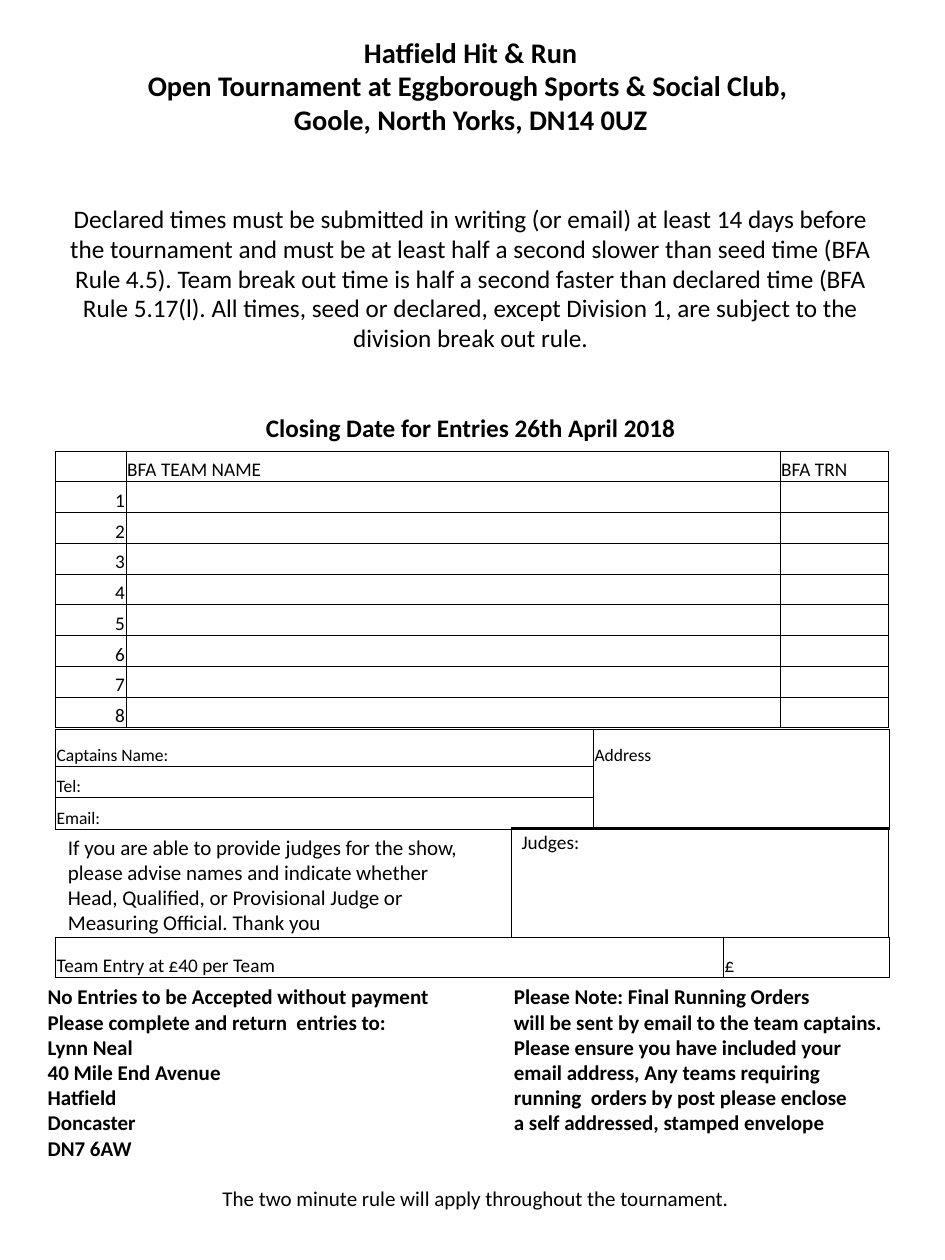
from lxml.etree import SubElement
from pptx import Presentation
from pptx.dml.color import RGBColor
from pptx.enum.text import MSO_ANCHOR as Anchor, MSO_AUTO_SIZE as AutoSize, PP_ALIGN as Align
from pptx.oxml.ns import qn
from pptx.util import Inches, Pt

COLORS = {"ink": "000000"}
FONT = "Calibri"

# Content: text, size, bold, space before in points
HEADING = [
    ("Hatfield Hit & Run\vOpen Tournament at Eggborough Sports & Social Club, \v"
     "Goole, North Yorks, DN14 0UZ", 16.2, True, 0),
    ("Declared times must be submitted in writing (or email) at least 14 days before the "
     "tournament and must be at least half a second slower than seed time (BFA Rule 4.5). "
     "Team break out time is half a second faster than declared time (BFA Rule 5.17(l). "
     "All times, seed or declared, except Division 1, are subject to the division break "
     "out rule.", 14.4, False, 39),
    ("Closing Date for Entries 26th April 2018", 14.4, True, 34.5),
]
TEAMS = [("", "BFA TEAM NAME", "BFA TRN")] + [(str(n), "", "") for n in range(1, 9)]
CONTACT = [("Captains Name:", "Address"), ("Tel:", ""), ("Email:", "")]
JUDGES = [("Judges:",), ("",), ("",), ("",)]
FEES = [("Team Entry at £40 per Team", "£")]
JUDGE_REQUEST = ("If you are able to provide judges for the show, please advise names and "
                 "indicate whether Head, Qualified, or Provisional Judge or Measuring "
                 "Official. Thank you")
RETURN_NOTES = [
    ("No Entries to be Accepted without payment", "Please Note: Final Running Orders"),
    ("Please complete and return  entries to:", "will be sent by email to the team captains."),
    ("Lynn Neal", "Please ensure you have included your"),
    ("40 Mile End Avenue", "email address, Any teams requiring"),
    ("Hatfield", "running  orders by post please enclose"),
    ("Doncaster", "a self addressed, stamped envelope"),
    ("DN7 6AW", ""),
]
CLOSING_LINE = "The two minute rule will apply throughout the tournament."

LEFT = 0.44
NOTES_TAB = 3.7


def add_text(para, text, size, bold=False):
    span = para.add_run()
    span.text = text
    span.font.name, span.font.size, span.font.bold = FONT, Pt(size), bold
    span.font.color.rgb = RGBColor.from_string(COLORS["ink"])


def add_box(page, left, top, width, height):
    frame = page.shapes.add_textbox(*map(Inches, (left, top, width, height))).text_frame
    frame.word_wrap = True
    return frame


def rule_cell(cell, sides, width):
    props = cell._tc.get_or_add_tcPr()
    for side in "LRTB":
        line = SubElement(props, qn(f"a:ln{side}"), w=str(Pt(width)))
        if side in sides:
            fill = SubElement(line, qn("a:solidFill"))
            SubElement(fill, qn("a:srgbClr"), val=COLORS["ink"])
        else:
            SubElement(line, qn("a:noFill"))


def add_form(page, rows, left, top, widths, heights, size, line,
             open_column=None, indent=0.01):
    """Ruled table; the cells of open_column have no rules between rows."""
    frame = page.shapes.add_table(len(rows), len(widths), *map(
        Inches, (left, top, sum(widths), sum(heights))))
    table = frame.table
    table.first_row = table.horz_banding = False
    for column, width in zip(table.columns, widths):
        column.width = Inches(width)
    for r, (values, height) in enumerate(zip(rows, heights)):
        table.rows[r].height = Inches(height)
        for c, text in enumerate(values):
            cell = table.cell(r, c)
            cell.margin_left, cell.margin_right = Inches(indent), Inches(0.01)
            cell.margin_top, cell.margin_bottom = Inches(0.01), 0
            cell.vertical_anchor = Anchor.BOTTOM
            sides = "LRTB"
            if c == open_column:
                sides = "LR" + "T" * (r == 0) + "B" * (r == len(rows) - 1)
            rule_cell(cell, sides, line)
            cell.fill.background()
            para = cell.text_frame.paragraphs[0]
            if text:
                para.alignment = Align.RIGHT if text.isdigit() else Align.LEFT
                add_text(para, text, size)
            else:
                SubElement(para._p, qn("a:endParaRPr"), sz=str(size * 100))


def main():
    deck = Presentation()
    deck.slide_width, deck.slide_height = Inches(7.5), Inches(10)
    page = deck.slides.add_slide(deck.slide_layouts[5])

    # Heading, rules and closing date
    title = page.shapes.title
    title.left, title.top, title.width, title.height = map(Inches, (0.36, 0.27, 6.75, 3.27))
    frame = title.text_frame
    frame.word_wrap, frame.auto_size = True, AutoSize.NONE
    frame.vertical_anchor = Anchor.MIDDLE
    for i, (text, size, bold, before) in enumerate(HEADING):
        para = frame.add_paragraph() if i else frame.paragraphs[0]
        para.alignment, para.line_spacing, para.space_before = Align.CENTER, 0.98, Pt(before)
        for j, part in enumerate(text.split("\v")):
            if j:
                para.add_line_break()
            add_text(para, part, size, bold)

    # Entry form
    add_form(page, TEAMS, LEFT, 3.58, [0.56, 5.19, 0.86], [2.2 / 9] * 9, 11, 0.5)
    add_form(page, CONTACT, LEFT, 5.79, [4.27, 2.35], [0.29, 0.25, 0.25], 10, 0.5,
             open_column=1)
    request = add_box(page, LEFT, 6.57, 3.31, 0.91)
    add_text(request.paragraphs[0], JUDGE_REQUEST, 12)
    add_form(page, JUDGES, 4.06, 6.57, [2.99], [0.87 / 4] * 4, 11, 1,
             open_column=0, indent=0.08)
    add_form(page, FEES, LEFT, 7.44, [5.3, 1.32], [0.32], 11, 1)

    # Return address beside the running order note
    notes = add_box(page, 0.28, 7.76, 6.99, 1.92)
    for i, (address, note) in enumerate(RETURN_NOTES):
        para = notes.add_paragraph() if i else notes.paragraphs[0]
        stops = SubElement(para._p.get_or_add_pPr(), qn("a:tabLst"))
        SubElement(stops, qn("a:tab"), pos=str(Inches(NOTES_TAB)), algn="l")
        add_text(para, f"{address}\t{note}" if note else address, 12, True)
    para = notes.add_paragraph()
    para.alignment, para.space_before = Align.CENTER, Pt(14.6)
    add_text(para, CLOSING_LINE, 12)

    deck.save("out.pptx")


if __name__ == "__main__":
    main()
